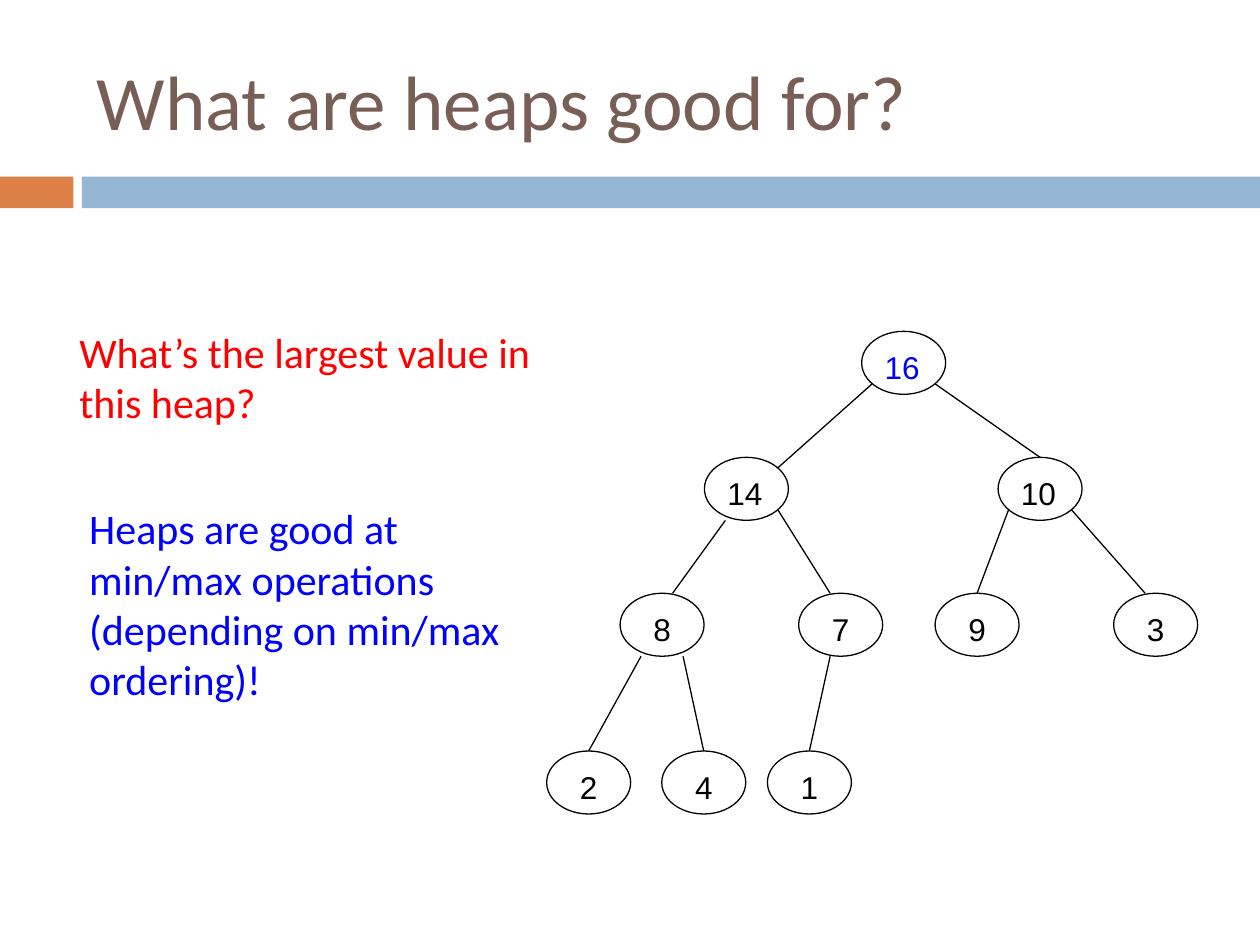
from lxml.etree import SubElement
from pptx import Presentation
from pptx.dml.color import RGBColor
from pptx.enum.shapes import MSO_CONNECTOR, MSO_SHAPE
from pptx.enum.text import MSO_ANCHOR, PP_ALIGN
from pptx.oxml.ns import qn
from pptx.util import Cm, Pt

COLORS = {
    "title": "775F55", "accent": "DD8047", "band": "94B6D2",
    "question": "FF0000", "answer": "0000FF", "ink": "000000",
}


def color(name):
    return RGBColor.from_string(COLORS[name])


def write(holder, text, size, font, color_name):
    frame = holder.text_frame
    frame.word_wrap = True
    frame.text = text
    paragraph = frame.paragraphs[0]
    paragraph.alignment = PP_ALIGN.LEFT
    run_font = paragraph.runs[0].font
    run_font.size = Pt(size)
    run_font.name = font
    run_font.color.rgb = color(color_name)


prs = Presentation()
prs.slide_width, prs.slide_height = Cm(25.4), Cm(19.05)
slide = prs.slides.add_slide(prs.slide_layouts[5])

# Title and the two-part band below it
title = slide.shapes.title
title.left, title.top, title.width, title.height = Cm(1.7), Cm(0.64), Cm(22.66), Cm(2.74)
write(title, "What are heaps good for?", 44, "Calibri", "title")
title.text_frame.vertical_anchor = MSO_ANCHOR.MIDDLE

for left, width, fill in [(0, 1.48, "accent"), (1.65, 23.75, "band")]:
    bar = slide.shapes.add_shape(MSO_SHAPE.RECTANGLE, Cm(left), Cm(3.56), Cm(width), Cm(0.64))
    bar.shadow.inherit = False
    bar.fill.solid()
    bar.fill.fore_color.rgb = color(fill)
    bar.line.fill.background()

# Heap nodes: each level has one top, each node its own left edge
UNIT = Cm(1.27) / 6
NODE_WIDTH, NODE_HEIGHT = round(8 * UNIT), round(6 * UNIT)
levels = [
    (6.68, {"16": 17.37}),
    (9.22, {"14": 14.2, "10": 20.12}),
    (11.96, {"8": 12.5, "7": 16.1, "9": 18.85, "3": 22.45}),
    (15.14, {"2": 11.02, "4": 13.34, "1": 15.47}),
]
corners = {}
for top, nodes in levels:
    for value, left in nodes.items():
        x, y = corners[value] = Cm(left), Cm(top)
        node = slide.shapes.add_group_shape()
        oval = node.shapes.add_shape(MSO_SHAPE.OVAL, x, y, NODE_WIDTH, NODE_HEIGHT)
        oval.shadow.inherit = False
        oval.fill.background()
        oval.line.color.rgb = color("ink")
        oval.line.width = Pt(0.75)
        indent = 1 if len(value) == 2 else 2
        label = node.shapes.add_textbox(
            round(x + indent * UNIT), round(y + UNIT), round(7 * UNIT), Cm(1.02))
        write(label, value, 18, "Arial", "answer" if value == "16" else "ink")

# Edges: parent, child, and the end points in units from each node's corner
edges = [
    ("16", "14", (1, 5), (7, 1)),
    ("16", "10", (7, 5), (4, 0)),
    ("14", "8", (2, 6), (5, 0)),
    ("14", "7", (7, 5), (3, 0)),
    ("10", "9", (1, 5), (4, 0)),
    ("10", "3", (7, 5), (3, 0)),
    ("8", "2", (2, 6), (4, 0)),
    ("8", "4", (6, 6), (4, 0)),
    ("7", "1", (3, 6), (4, 0)),
]
for parent, child, start, end in edges:
    points = [round(corner + offset * UNIT)
              for value, offsets in ((parent, start), (child, end))
              for corner, offset in zip(corners[value], offsets)]
    edge = slide.shapes.add_connector(MSO_CONNECTOR.STRAIGHT, *points)
    edge.line.color.rgb = color("ink")
    edge.line.width = Pt(0.75)
    SubElement(edge._element.spPr, qn("a:effectLst"))

# Question and answer beside the tree
remarks = [
    ("What’s the largest value in this heap?", 1.35, 6.45, 9.68, 2.31, "question"),
    ("Heaps are good at min/max operations (depending on min/max ordering)!",
     1.55, 10.01, 8.99, 4.37, "answer"),
]
for text, left, top, width, height, ink in remarks:
    remark = slide.shapes.add_textbox(Cm(left), Cm(top), Cm(width), Cm(height))
    write(remark, text, 24, "Calibri", ink)

prs.save("out.pptx")
